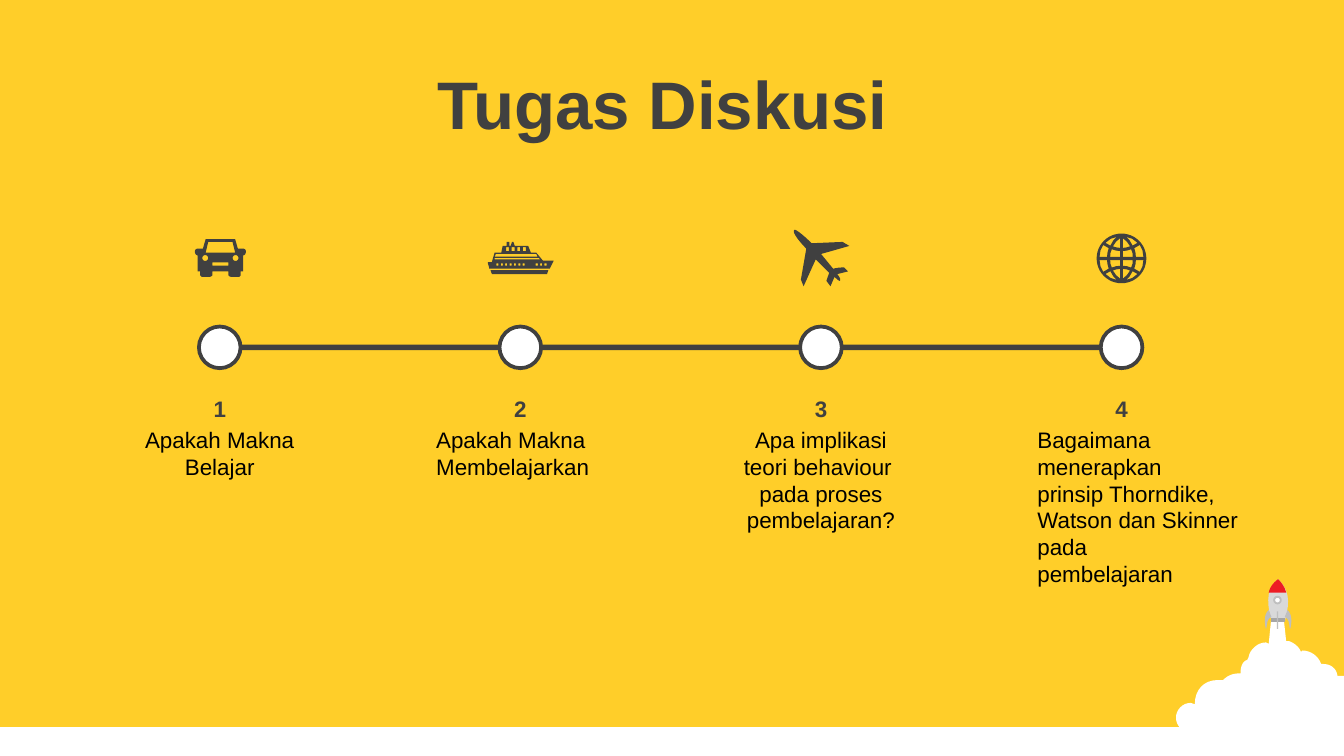
from dataclasses import dataclass
from math import cos, pi, sin

from pptx import Presentation
from pptx.dml.color import RGBColor
from pptx.enum import shapes, text
from pptx.util import Inches, Pt

YELLOW = RGBColor(0xFF, 0xCE, 0x29)
DARK = RGBColor(0x40, 0x40, 0x40)
BLACK = RGBColor(0, 0, 0)
WHITE = RGBColor(0xFF, 0xFF, 0xFF)
RED = RGBColor(0xED, 0x1C, 0x24)
LIGHT = RGBColor(0xD9, 0xD9, 0xD9)
SILVER = RGBColor(0xBF, 0xBF, 0xBF)
GREY = RGBColor(0xA6, 0xA6, 0xA6)
FONT = "Arial"
RECT, OVAL = shapes.MSO_SHAPE.RECTANGLE, shapes.MSO_SHAPE.OVAL
CENTER, LEFT = text.PP_ALIGN.CENTER, text.PP_ALIGN.LEFT

Contour = list[tuple[float, ...]]


@dataclass
class Step:
    lines: list[str]
    width: float = 1.45
    height: float = 0.5
    align: text.PP_ALIGN = CENTER


STEPS = [
    Step(["Apakah Makna Belajar"]),
    Step(["Apakah Makna Membelajarkan"], align=LEFT),
    Step(["Apa implikasi teori behaviour ", "pada proses", "pembelajaran?"], height=0.91),
    Step(["Bagaimana", "menerapkan", "prinsip Thorndike, Watson dan Skinner pada",
          "pembelajaran"], 1.79, 1.31, LEFT),
]


def paint(sp, fill: RGBColor, line: RGBColor | None = None, weight: float = 1):
    sp.shadow.inherit = False
    sp.fill.solid()
    sp.fill.fore_color.rgb = fill
    if line is None:
        sp.line.fill.background()
    else:
        sp.line.color.rgb = line
        sp.line.width = Pt(weight)
    return sp


def add_preset(s, kind, x: float, y: float, w: float, h: float, fill, line=None, weight=1):
    sp = s.shapes.add_shape(kind, Inches(x), Inches(y), Inches(w), Inches(h))
    return paint(sp, fill, line, weight)


def write(tf, lines: list[str], *, size=12, color=BLACK, bold=False, align=CENTER):
    tf.word_wrap = True
    for i, line in enumerate(lines):
        p = tf.paragraphs[0] if i == 0 else tf.add_paragraph()
        p.alignment = align
        r = p.add_run()
        r.text = line
        r.font.name, r.font.size, r.font.bold = FONT, Pt(size), bold
        r.font.color.rgb = color


def add_text(s, x: float, y: float, w: float, h: float, lines: list[str], **fmt):
    write(s.shapes.add_textbox(Inches(x), Inches(y), Inches(w), Inches(h)).text_frame, lines, **fmt)


# Contours are in hundredths of an inch: 2 numbers are a point, 6 a Bezier curve
def flatten(contour: Contour, parts: int = 8) -> list[tuple[int, int]]:
    points = [contour[0]]
    for item in contour[1:]:
        if len(item) == 2:
            points.append(item)
            continue
        ctrl = [points[-1], item[:2], item[2:4], item[4:]]
        for k in range(1, parts + 1):
            t = k / parts
            weights = ((1 - t) ** 3, 3 * t * (1 - t) ** 2, 3 * t * t * (1 - t), t ** 3)
            points.append(tuple(sum(w * c[i] for w, c in zip(weights, ctrl)) for i in (0, 1)))
    return [(Inches(x / 100), Inches(y / 100)) for x, y in points]


def add_outline(s, contours: list[Contour], fill: RGBColor):
    first, *rest = map(flatten, contours)
    builder = s.shapes.build_freeform(*first[0], scale=1.0)
    builder.add_line_segments(first[1:], close=True)
    for points in rest:
        builder.move_to(*points[0])
        builder.add_line_segments(points[1:], close=True)
    return paint(builder.convert_to_shape(), fill)


def box(x: float, y: float, w: float, h: float) -> Contour:
    return [(x, y), (x + w, y), (x + w, y + h), (x, y + h)]


def circle(cx: float, cy: float, r: float, n: int = 48) -> Contour:
    return [(cx + r * cos(2 * pi * k / n), cy + r * sin(2 * pi * k / n)) for k in range(n)]


def mirror(contour: Contour, axis: float) -> Contour:
    return [tuple(2 * axis - v if i % 2 == 0 else v for i, v in enumerate(item))
            for item in contour]


def add_rocket(s):
    cloud = [
        (946, 459), (955, 459), (957, 477), (959, 477), (962, 478, 965, 480, 967, 483),
        (968, 485), (969, 484), (975, 484, 981, 488, 983, 494), (984, 494),
        (990, 494, 994, 497, 995, 502), (995, 503), (1000, 503), (1000, 560),
        (994, 560, 990, 559, 987, 557), (978, 559), (969, 554), (960, 559), (951, 555),
        (945, 559, 940, 561, 934, 561), (923, 561, 917, 556, 913, 551),
        (904, 556, 894, 550, 893, 543), (891, 545, 889, 545, 886, 545),
        (880, 545, 875, 540, 875, 534), (875, 528, 880, 523, 886, 523), (889, 524),
        (889, 513, 896, 506, 906, 506), (910, 506), (914, 502, 918, 501, 923, 501),
        (923, 495, 925, 492, 928, 491), (929, 489), (930, 483, 936, 478, 942, 478), (944, 479)]
    body = [(946, 462), (944, 453, 940, 440, 951, 431), (962, 441, 958, 454, 956, 462)]
    nose = [(951, 431), (954, 434, 956, 437, 957, 441), (944, 441), (945, 437, 947, 434, 951, 431)]
    fin = [(944, 454), (946, 459), (942, 461, 943, 466, 942, 468), (941, 465, 940, 457, 944, 454)]
    for contour, fill in [(cloud, WHITE), (body, LIGHT), (box(946, 460, 10, 3), GREY), (nose, RED)]:
        add_outline(s, [contour], fill)
    add_preset(s, OVAL, 9.48, 4.44, 0.05, 0.05, WHITE, SILVER)
    add_preset(s, RECT, 9.5, 4.55, 0.01, 0.13, SILVER)
    for contour in (fin, mirror(fin, 951)):
        add_outline(s, [contour], SILVER)


def globe() -> list[Contour]:
    cx, cy = 834.5, 192.3
    quarter = [
        [(1, 1.2), (1, 5.5), (4, 5.8), (7.2, 6.8), (8.2, 4), (8.4, 1.2)],
        [(10.7, 1.2), (10.5, 4), (9.5, 7.6), (13.6, 10), (15.6, 6), (16.3, 1.2)],
        [(1, 15), (4, 12.5), (6.4, 9), (4, 8.2), (1, 7.8)],
        [(3.5, 16), (6, 13.5), (8.3, 9.5), (11.9, 11.6), (8, 14.6)]]
    return [circle(cx, cy, 18.5)] + [
        [(cx + sx * x, cy + sy * y) for x, y in hole]
        for sx in (1, -1) for sy in (1, -1) for hole in quarter]


def ship() -> list[Contour]:
    hull = [(381, 180), (382, 180), (383, 183), (393, 183), (395, 188), (399, 188), (404, 194),
            (412, 194), (412, 194, 410, 198, 409, 200), (364, 200), (364, 198, 363, 197, 363, 195),
            (366, 195), (368, 188), (373, 188), (374, 183), (377, 183), (377, 180), (379, 180),
            (379, 183), (380, 183)]
    keel = [(365, 201), (408, 201), (407, 204), (366, 204)]
    decks = [[(368, 192), (368, 193), (402, 193), (401, 192)],
             [(369, 189), (368, 191), (400, 191), (399, 189)]]
    portholes = [box(369.4 + 3.25 * k, 196, 1.5, 1.6) for k in (0, 1, 2, 3, 4, 5, 6, 9, 10, 11)]
    windows = [box(376.5 + 4.2 * k, 184, 2.2, 3) for k in range(4)]
    return [hull, keel, *decks, *portholes, *windows]


def plane() -> list[Contour]:
    return [[(631, 202), (623, 204), (624, 205, 626, 208, 625, 209), (624, 209, 622, 207, 621, 206),
             (618, 213), (615, 209), (617, 203), (607, 193), (598, 213), (596, 208), (600, 185),
             (596, 181, 589, 173, 591, 171), (592, 170, 600, 177, 604, 181), (627, 180),
             (632, 183), (611, 189), (620, 200), (623, 199, 628, 199, 628, 199)]]


def car() -> list[Contour]:
    half = [(164, 178), (153, 178), (151, 185), (147, 185), (146, 185, 145, 186, 145, 187),
            (145, 189, 146, 190, 147, 190), (147, 202), (149, 202), (149, 205),
            (149, 205, 150, 206, 150, 206), (156, 206), (157, 206, 158, 205, 158, 205),
            (158, 202), (164, 202)]
    # The right half runs back over the mirrored points of a flattened left half
    left = [(x / 9144, y / 9144) for x, y in flatten(half)]
    screen = [(155, 180), (153, 188), (175, 188), (173, 180)]
    return [left + mirror(left, 164)[::-1], screen, box(158, 195.3, 12, 2.4),
            circle(152.7, 192, 2.2, 16), circle(175.3, 192, 2.2, 16)]


def main():
    prs = Presentation()
    prs.slide_width = Inches(10)
    prs.slide_height = Inches(10 * 9 / 16)
    s = prs.slides.add_slide(prs.slide_layouts[5])
    s.background.fill.solid()
    s.background.fill.fore_color.rgb = YELLOW

    # Ground and rocket
    add_preset(s, RECT, 0, 5.41, 10, 0.24, WHITE)
    add_rocket(s)

    # Title
    title = s.shapes.title
    title.left, title.top, title.width, title.height = map(Inches, (0, 0.45, 10, 0.63))
    title.text_frame.vertical_anchor = text.MSO_ANCHOR.MIDDLE
    write(title.text_frame, ["Tugas Diskusi "], size=36, color=DARK, bold=True)

    # Timeline
    first, last, node, top = 1.48, 8.19, 0.31, 2.43
    gap = (last - first) / (len(STEPS) - 1)
    add_preset(s, RECT, first + node / 2, top + node / 2 - 0.02, last - first, 0.04, DARK)
    for icon in (globe(), ship(), plane(), car()):
        add_outline(s, icon, DARK)

    # Steps
    for i, step in enumerate(STEPS):
        x = first + i * gap
        add_preset(s, OVAL, x, top, node, node, WHITE, DARK, 2)
        add_text(s, x - 0.57, 3.12, step.width, step.height, step.lines, align=step.align)
        add_text(s, x - 0.57, 2.89, 1.45, 0.3, [str(i + 1)], color=DARK, bold=True)

    prs.save("out.pptx")


if __name__ == "__main__":
    main()
